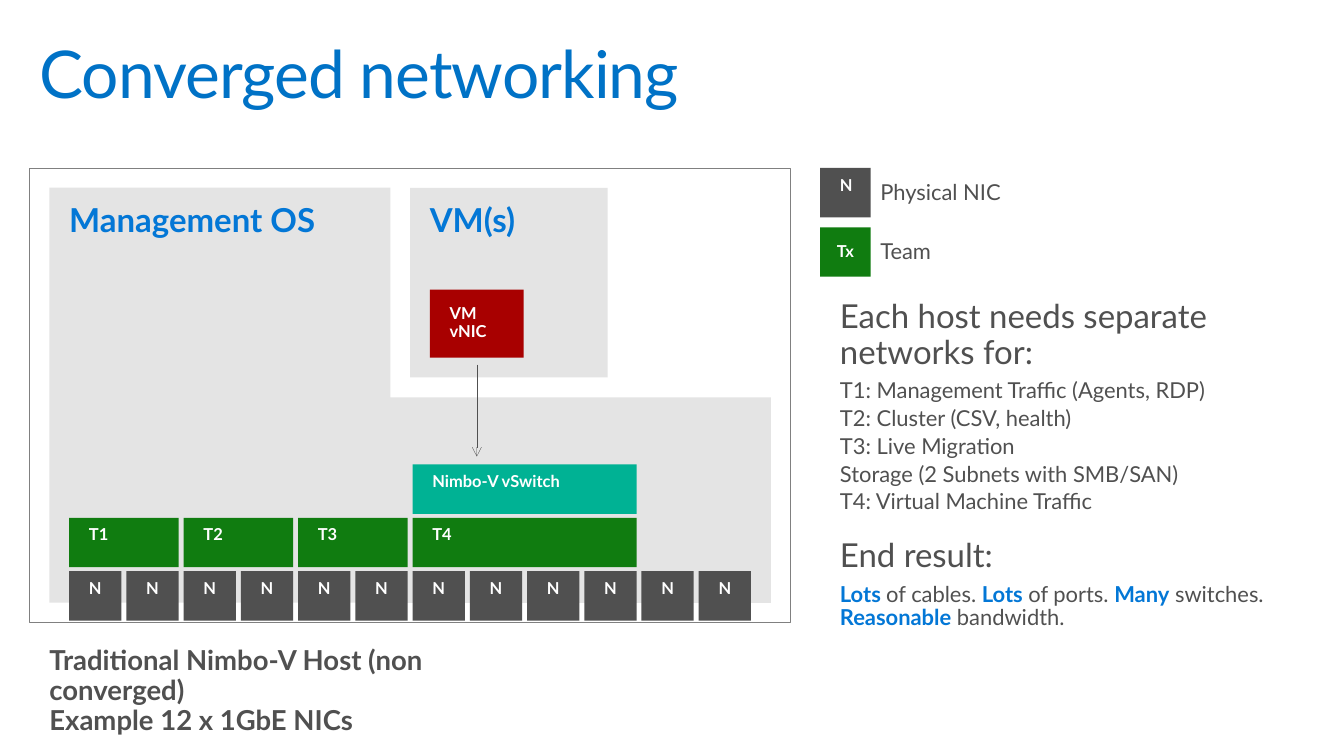
from dataclasses import dataclass

from lxml.etree import SubElement
from pptx import Presentation
from pptx.dml.color import RGBColor
from pptx.enum.shapes import MSO_CONNECTOR as Connector, MSO_SHAPE as Shape
from pptx.enum.text import MSO_ANCHOR as Anchor, MSO_AUTO_SIZE as Fit, PP_ALIGN as Align
from pptx.oxml.ns import qn
from pptx.util import Inches, Pt


@dataclass(frozen=True)
class Theme:
    font: str = "Lato"
    title: str = "0072C6"
    accent: str = "0377D6"
    ink: str = "505050"
    white: str = "FFFFFF"
    frame: str = "808080"
    area: str = "E4E4E4"
    nic: str = "505050"
    team: str = "107C10"
    vnic: str = "A80000"
    vswitch: str = "00B294"
    title_size: int = 48
    heading_size: int = 24
    caption_size: int = 20
    body_size: int = 16
    label_size: int = 12


THEME = Theme()

TITLE = "Converged networking"
CAPTION = "Traditional Nimbo-V Host (non converged)\vExample 12 x 1GbE NICs"
NIC_COUNT = 12
# label, row, first NIC column, NICs spanned, colour
STACK = [
    ("Nimbo-V vSwitch", 0, 6, 4, THEME.vswitch),
    ("T1", 1, 0, 2, THEME.team),
    ("T2", 1, 2, 2, THEME.team),
    ("T3", 1, 4, 2, THEME.team),
    ("T4", 1, 6, 4, THEME.team),
]
LEGEND = [("N", "Physical NIC", THEME.nic, True), ("Tx", "Team", THEME.team, False)]
# text, size, space before
NOTES = [
    ("Each host needs separate networks for:", THEME.heading_size, 18),
    ("T1: Management Traffic (Agents, RDP)", THEME.body_size, 6),
    ("T2: Cluster (CSV, health)", THEME.body_size, 3),
    ("T3: Live Migration", THEME.body_size, 3),
    ("Storage (2 Subnets with SMB/SAN)", THEME.body_size, 3),
    ("T4: Virtual Machine Traffic", THEME.body_size, 3),
    ("End result:", THEME.heading_size, 18),
]
# text, emphasised
RESULT = [
    ("Lots ", True), ("of cables. ", False), ("Lots", True), (" of ports. ", False),
    ("Many", True), (" switches. ", False), ("Reasonable", True), (" bandwidth.", False),
]

# Inches
WIDTH, HEIGHT = 13.6, 7.65
LEFT, TOP, PAD = 0.3, 1.7, 0.2
HOST_W, HOST_H = 7.7, 4.6
SIDE = LEFT + HOST_W + 0.3
GAP, CELL_H = 0.05, 0.5
GRID_LEFT, GRID_TOP = LEFT + 2 * PAD, 4.7
COLUMN = (HOST_W - 4 * PAD + GAP) / NIC_COUNT
ROW = CELL_H + GAP - 0.01
LEGEND_ROW = 0.6
INSETS = (0.2, 0.16, 0.2, 0.16)


def rgb(code):
    return RGBColor.from_string(code)


def style(paragraph, size, color, bold=False, align=Align.LEFT):
    paragraph.alignment = align
    paragraph.line_spacing = 0.9
    font = paragraph.font
    font.name, font.size, font.bold = THEME.font, Pt(size), bold
    font.color.rgb = rgb(color)


def set_frame(frame, insets=INSETS, anchor=Anchor.TOP, fit=Fit.NONE):
    frame.word_wrap = True
    frame.auto_size = fit
    frame.vertical_anchor = anchor
    (frame.margin_left, frame.margin_top,
     frame.margin_right, frame.margin_bottom) = map(Inches, insets)


def add_box(shapes, place, fill=None, line=None):
    box = shapes.add_shape(Shape.RECTANGLE, *map(Inches, place))
    box.shadow.inherit = False
    if fill:
        box.fill.solid()
        box.fill.fore_color.rgb = rgb(fill)
    else:
        box.fill.background()
    if line:
        box.line.color.rgb = rgb(line)
        box.line.width = Pt(0.25)
    else:
        box.line.fill.background()
    return box


def add_area(shapes, place, heading):
    frame = add_box(shapes, place, THEME.area).text_frame
    set_frame(frame)
    frame.text = heading
    style(frame.paragraphs[0], THEME.heading_size, THEME.accent, True)


def add_block(shapes, place, label, fill, align=Align.LEFT, fit=Fit.SHAPE_TO_FIT_TEXT, wrap=True):
    frame = add_box(shapes, place, fill).text_frame
    set_frame(frame, fit=fit)
    frame.word_wrap = wrap
    frame.text = label
    style(frame.paragraphs[0], THEME.label_size, THEME.white, True, align)


def add_text(shapes, place, text, size, bold=False, **layout):
    frame = shapes.add_textbox(*map(Inches, place)).text_frame
    set_frame(frame, fit=Fit.SHAPE_TO_FIT_TEXT, **layout)
    frame.text = text
    style(frame.paragraphs[0], size, THEME.ink, bold)
    frame.paragraphs[0].space_after = Pt(6)


def add_arrow(shapes, x, start, end):
    arrow = shapes.add_connector(Connector.STRAIGHT, *map(Inches, (x, start, x, end)))
    arrow.line.color.rgb = rgb(THEME.ink)
    arrow.line.width = Pt(0.25)
    properties = arrow.line._get_or_add_ln()
    SubElement(properties, qn("a:tailEnd"), type="arrow")
    SubElement(arrow._element.spPr, qn("a:effectLst"))


def cell(row, column, span=1):
    """Place of a block that spans NIC columns in the host's bottom rows."""
    return (GRID_LEFT + column * COLUMN, GRID_TOP + row * ROW, span * COLUMN - GAP, CELL_H)


def write_title(title):
    title.left, title.top, title.width, title.height = map(Inches, (LEFT, 0.32, WIDTH - 2 * LEFT, 1))
    set_frame(title.text_frame, (0.1,) * 4)
    title.text_frame.text = TITLE
    heading = title.text_frame.paragraphs[0]
    style(heading, THEME.title_size, THEME.title)
    heading.runs[0]._r.get_or_add_rPr().set("spc", "-70")


def draw_host(shapes):
    inner_top, inner_bottom = TOP + PAD, TOP + HOST_H - PAD
    vm_left, vnic_w = 4.15, 0.95
    add_area(shapes, (vm_left, inner_top, 2, 1.92), "VM(s)")
    add_box(shapes, (LEFT, TOP, HOST_W, HOST_H), line=THEME.frame)
    add_area(shapes, (LEFT + PAD, inner_top, 3.45, inner_bottom - inner_top), "Management OS")
    add_box(shapes, (3.82, 4.02, LEFT + HOST_W - PAD - 3.82, inner_bottom - 4.02), THEME.area)
    add_block(shapes, (vm_left + PAD, 2.93, vnic_w, 0.69), "VM\vvNIC", THEME.vnic)
    add_arrow(shapes, vm_left + PAD + vnic_w / 2, 3.69, 4.62)
    for label, row, column, span, fill in STACK:
        add_block(shapes, cell(row, column, span), label, fill)
    for column in range(NIC_COUNT):
        add_block(shapes, cell(2, column), "N", THEME.nic, Align.CENTER)


def draw_legend(shapes):
    for row, (mark, meaning, fill, grows) in enumerate(LEGEND):
        top = TOP + row * LEGEND_ROW
        fit = Fit.SHAPE_TO_FIT_TEXT if grows else Fit.NONE
        add_text(shapes, (SIDE + 0.51, top - 0.03, 1.5, 0.57), meaning, THEME.body_size,
                 insets=(0.1, 0.16, 0, 0.16), anchor=Anchor.MIDDLE)
        add_block(shapes, (SIDE, top, 0.51, CELL_H), mark, fill, Align.CENTER, fit, wrap=False)


def write_notes(shapes):
    frame = shapes.add_textbox(*map(Inches, (SIDE, 2.88, 5, 3.7))).text_frame
    set_frame(frame, fit=Fit.SHAPE_TO_FIT_TEXT)
    frame.text = "\n".join(text for text, _, _ in NOTES)
    for paragraph, (_, size, before) in zip(frame.paragraphs, NOTES):
        style(paragraph, size, THEME.ink)
        paragraph.space_before = Pt(before)
    result = frame.add_paragraph()
    style(result, THEME.body_size, THEME.ink)
    result.space_before = Pt(6)
    for text, emphasised in RESULT:
        run = result.add_run()
        run.text = text
        run.font.bold = emphasised
        run.font.color.rgb = rgb(THEME.accent if emphasised else THEME.ink)


def main():
    deck = Presentation()
    deck.slide_width, deck.slide_height = Inches(WIDTH), Inches(HEIGHT)
    shapes = deck.slides.add_slide(deck.slide_layouts[5]).shapes
    write_title(shapes.title)
    add_text(shapes, (LEFT, 6.39, 5.31, 0.93), CAPTION, THEME.caption_size, True)
    write_notes(shapes)
    draw_host(shapes)
    draw_legend(shapes)
    deck.save("out.pptx")


if __name__ == "__main__":
    main()
